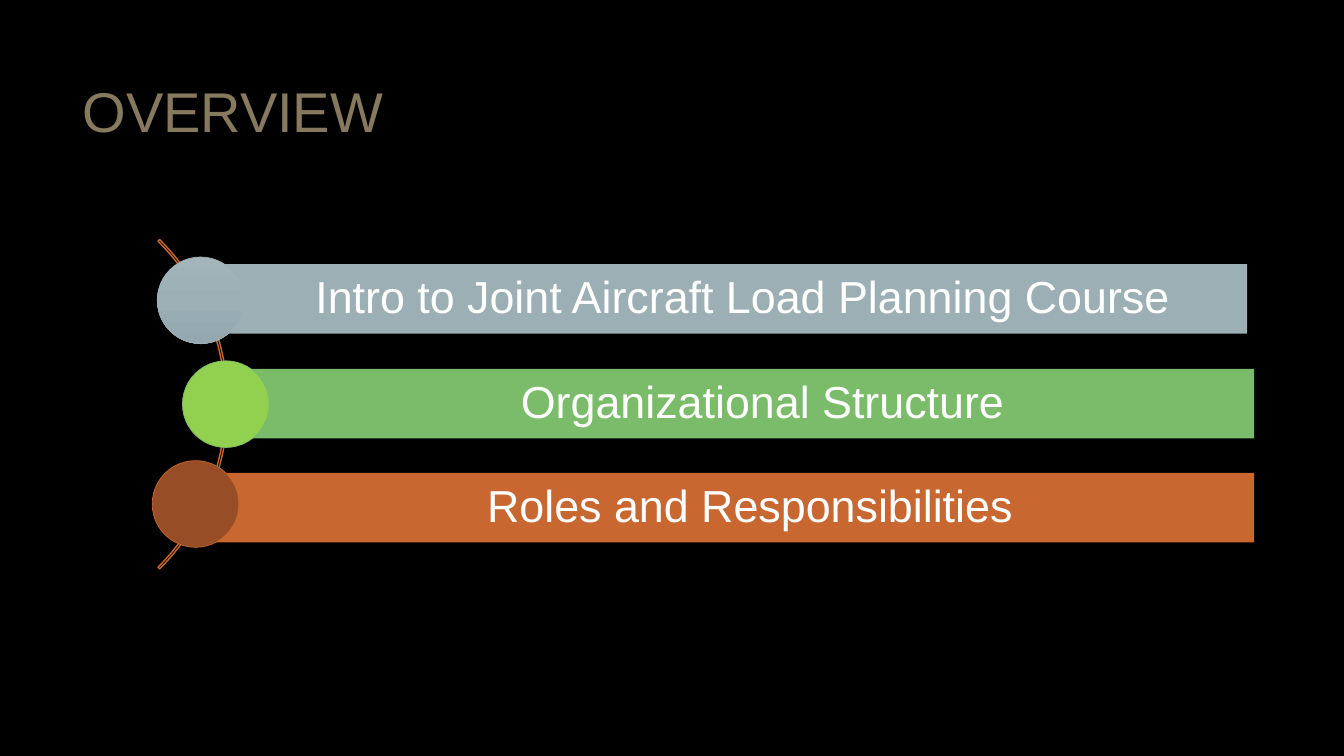
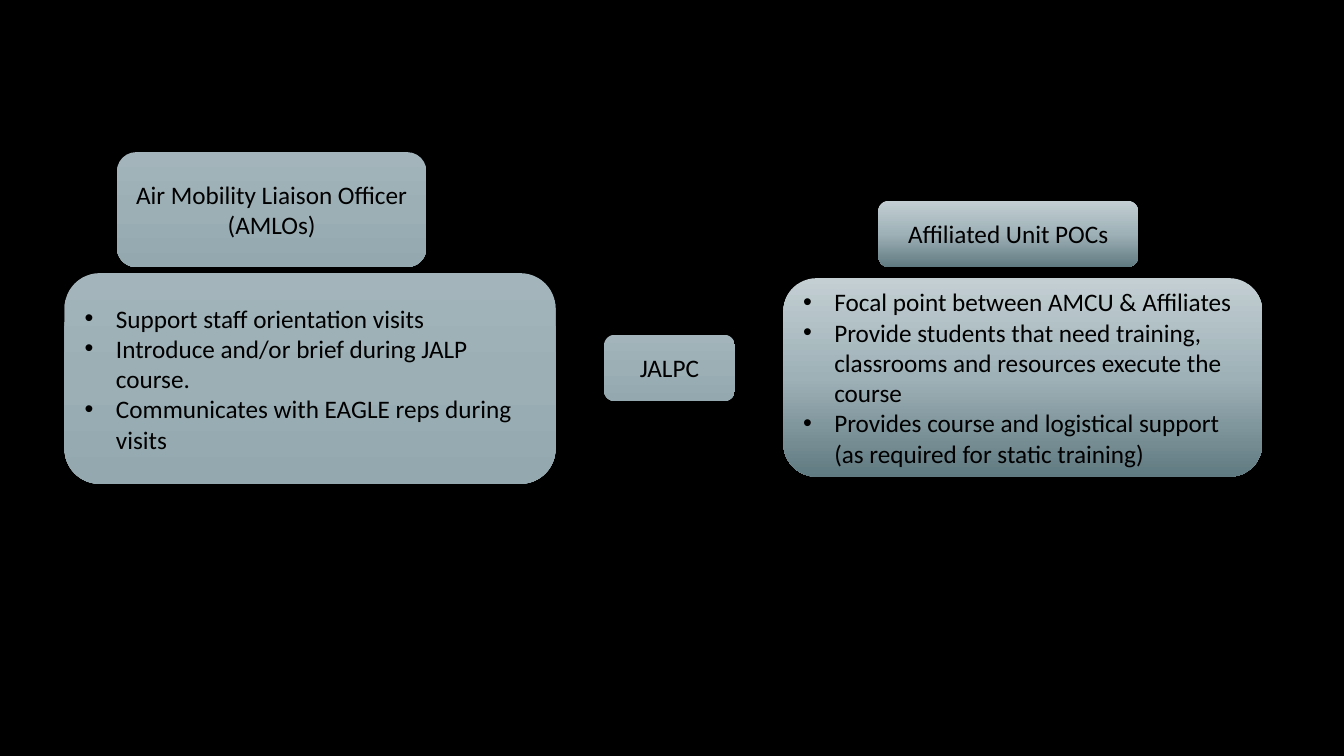
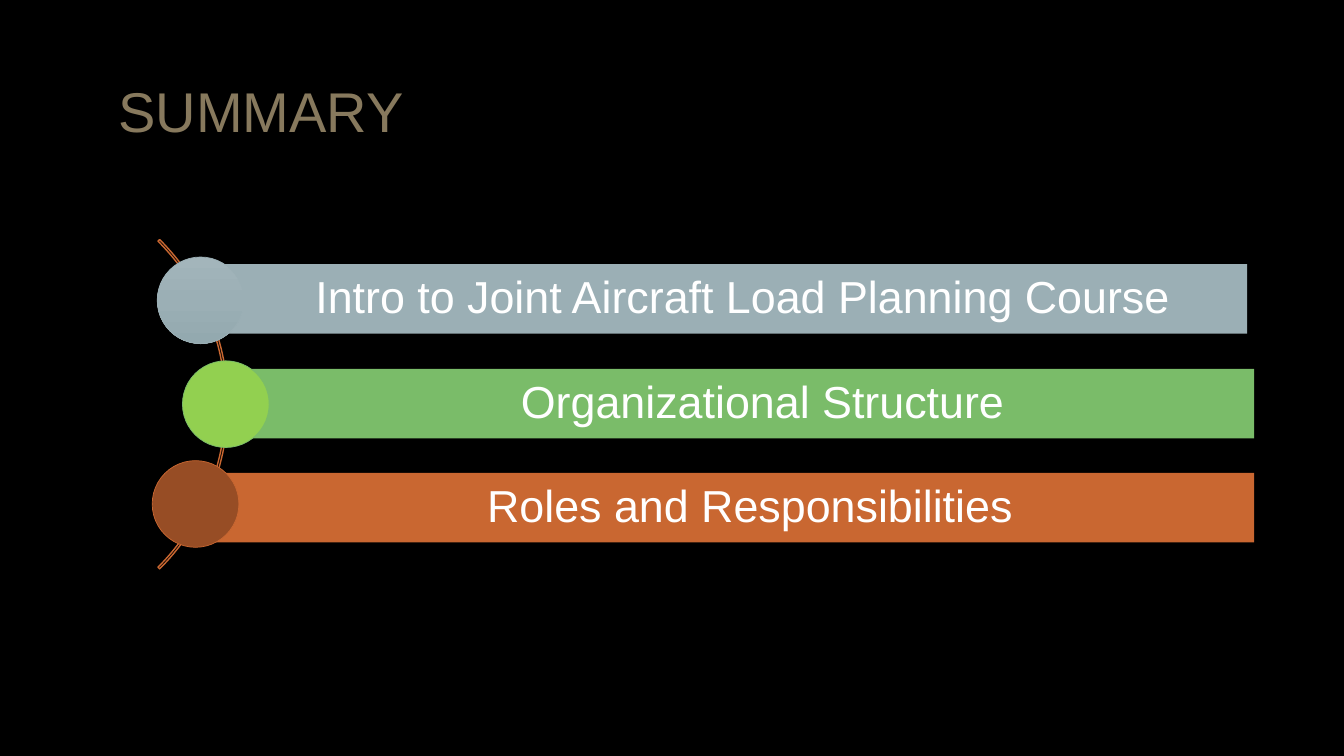
from copy import deepcopy

from pptx import Presentation
from pptx import util as u
from pptx.dml.color import RGBColor
from pptx.enum import shapes, text
from pptx.oxml import parse_xml
from pptx.oxml.ns import nsdecls, qn

BLACK, WHITE, TITLE = "000000", "FFFFFF", "87795D"
SLATE, GREEN, ORANGE = "9BAFB5", "7ABC69", "C96731"
SOFT = ["A3B5BB", SLATE, "93A9AF"]
STRONG = ["C3CFD3", "9EB1B7", "607A81"]
SHAPE = shapes.MSO_SHAPE


def paint(fill, *colours):
    """Fill with one colour, or with three blended from top to bottom; no colour clears."""
    if not colours:
        fill.background()
    elif len(colours) == 1:
        fill.solid()
        fill.fore_color.rgb = RGBColor.from_string(colours[0])
    else:
        fill.gradient()
        fill.gradient_angle = 270
        stop_list = fill._xPr.find(".//" + qn("a:gsLst"))
        stop_list.append(deepcopy(stop_list[-1]))
        for stop, colour, position in zip(fill.gradient_stops, colours, (0, 0.5, 1)):
            stop.color.rgb = RGBColor.from_string(colour)
            stop.position = position


def add_box(page, kind, at, colours=(), outline=None, width=0.5):
    box = page.shapes.add_shape(kind, *map(u.Inches, at))
    box.shadow.inherit = False
    paint(box.fill, *colours)
    if outline:
        paint(box.line.fill, outline)
        box.line.width = u.Pt(width)
    else:
        paint(box.line.fill)
    return box


deck = Presentation()
deck.slide_width, deck.slide_height = u.Inches(13.33), u.Inches(7.5)
paint(deck.slide_master.background.fill, BLACK)
title_layout, blank_layout = deck.slide_layouts[5], deck.slide_layouts[6]

# Agenda slides: title, arc and three bars with discs
# label, bar left, bar top, bar width, bar colour, disc left, disc top, disc colours
agenda = [
    ("Intro to Joint Aircraft Load Planning Course", 1.92, 2.62, 10.45, SLATE, 1.56, 2.55, SOFT),
    ("Organizational Structure", 2.24, 3.66, 10.2, GREEN, 1.81, 3.58, ["92D050"]),
    ("Roles and Responsibilities", 1.99, 4.69, 10.45, ORANGE, 1.51, 4.57, ["974D25"]),
]
overview = deck.slides.add_slide(title_layout)
roles = deck.slides.add_slide(blank_layout)
summary = deck.slides.add_slide(title_layout)

for page, heading, left in [(overview, "OVERVIEW", 0.31), (summary, "SUMMARY", 0.59)]:
    title = page.shapes.title
    title.left, title.top = u.Inches(left), u.Inches(0.71)
    title.width, title.height = u.Inches(4), u.Inches(0.77)
    frame = title.text_frame
    frame.text = heading
    frame.auto_size = text.MSO_AUTO_SIZE.NONE
    frame.vertical_anchor = text.MSO_ANCHOR.TOP
    para = frame.paragraphs[0]
    para.alignment = text.PP_ALIGN.CENTER
    font = para.runs[0].font
    font.name, font.size = "Arial", u.Pt(40)
    paint(font.fill, TITLE)

    arc = add_box(page, SHAPE.BLOCK_ARC, (-2.36, 1.7, 4.62, 4.62), outline=ORANGE, width=1)
    for index, value in enumerate((189, 27, 0.005)):
        arc.adjustments[index] = value

    for label, bar_left, bar_top, width, colour, disc_left, disc_top, disc_colours in agenda:
        bar = add_box(page, SHAPE.RECTANGLE, (bar_left, bar_top, width, 0.69), [colour])
        frame = bar.text_frame
        frame.text = label
        frame.margin_left = u.Inches(0.54)
        frame.margin_right = frame.margin_top = frame.margin_bottom = u.Inches(0.09)
        para = frame.paragraphs[0]
        para.alignment = text.PP_ALIGN.CENTER
        para.line_spacing = 0.9
        font = para.runs[0].font
        font.name, font.size = "Arial", u.Pt(32)
        paint(font.fill, WHITE)
        add_box(page, SHAPE.OVAL, (disc_left, disc_top, 0.86, 0.86), disc_colours, colour)

# Roles slide: position, colours, bulleted or not, lines
role_boxes = [
    ((8.71, 1.99, 2.58, 0.66), STRONG, False, ["Affiliated Unit POCs"]),
    ((1.16, 1.51, 3.07, 1.14), SOFT, False, ["Air Mobility Liaison Officer", "(AMLOs)"]),
    ((5.99, 3.32, 1.3, 0.66), SOFT, False, ["JALPC"]),
    ((7.77, 2.76, 4.75, 1.97), STRONG, True, [
        "Focal point between AMCU & Affiliates",
        "Provide students that need training, classrooms and resources execute the course",
        "Provides course and logistical support (as required for static training)",
    ]),
    ((0.64, 2.71, 4.87, 2.09), SOFT, True, [
        "Support staff orientation visits",
        "Introduce and/or brief during JALP course.",
        "Communicates with EAGLE reps during visits",
    ]),
]
for at, colours, bulleted, lines in role_boxes:
    box = add_box(roles, SHAPE.ROUNDED_RECTANGLE, at, colours)
    box.text_frame.text = "\n".join(lines)
    for para in box.text_frame.paragraphs:
        para.alignment = text.PP_ALIGN.LEFT if bulleted else text.PP_ALIGN.CENTER
        if bulleted:
            properties = para._p.get_or_add_pPr()
            properties.set("marL", str(u.Inches(0.31)))
            properties.set("indent", str(-u.Inches(0.31)))
            properties.append(parse_xml(f'<a:buFont {nsdecls("a")} typeface="Arial"/>'))
            properties.append(parse_xml(f'<a:buChar {nsdecls("a")} char="•"/>'))
        font = para.runs[0].font
        font.name, font.size = "Calibri", u.Pt(18)
        paint(font.fill, BLACK)

deck.save("out.pptx")
